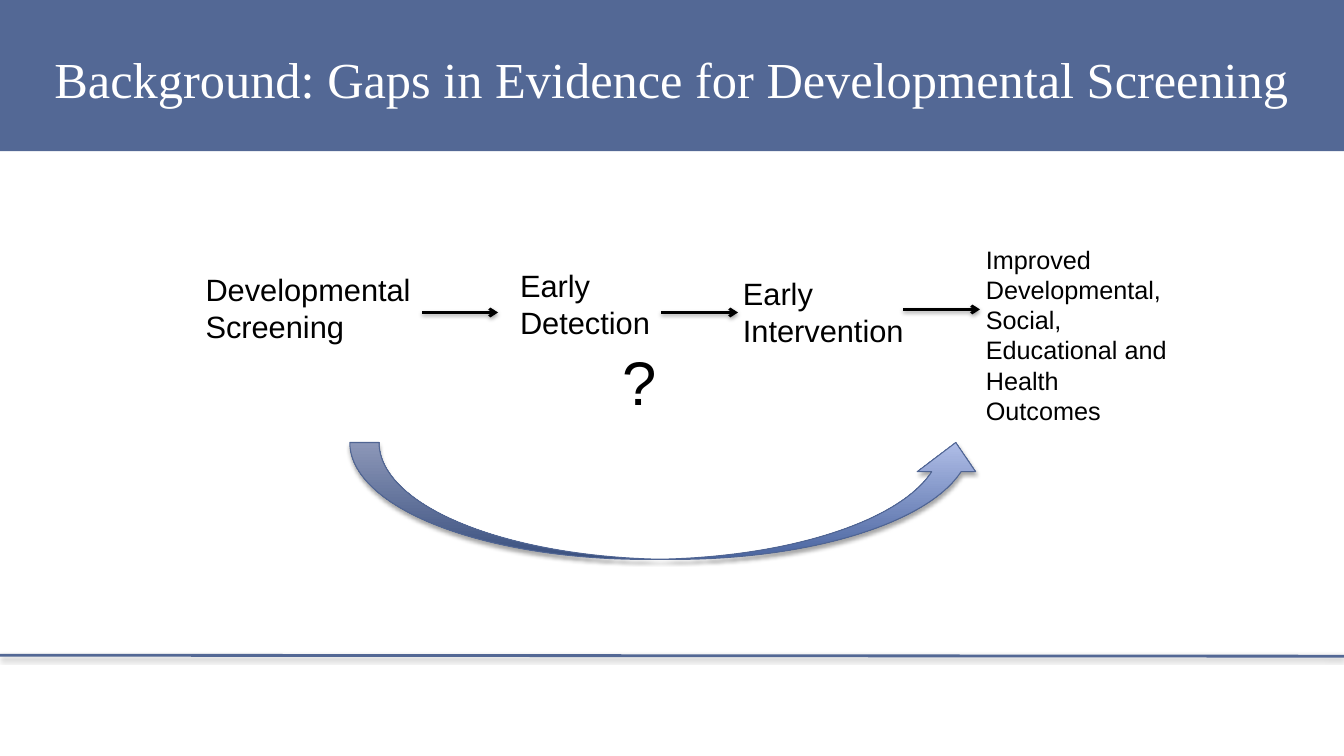
"""Build the slide on gaps in evidence for developmental screening."""
from lxml import etree
from pptx import Presentation
from pptx.dml.color import RGBColor
from pptx.enum.shapes import MSO_CONNECTOR, MSO_SHAPE
from pptx.enum.text import MSO_ANCHOR
from pptx.oxml import parse_xml
from pptx.oxml.ns import nsdecls, qn
from pptx.util import Inches, Pt

STRAIGHT = MSO_CONNECTOR.STRAIGHT
RECTANGLE = MSO_SHAPE.RECTANGLE
CURVED_ARROW = MSO_SHAPE.CURVED_UP_ARROW
TOP, BOTTOM = MSO_ANCHOR.TOP, MSO_ANCHOR.BOTTOM

BLUE = RGBColor(0x53, 0x68, 0x95)
BLACK = RGBColor(0, 0, 0)
WHITE = RGBColor(0xFF, 0xFF, 0xFF)
CURVE_LINE = RGBColor(0x50, 0x65, 0x93)
CURVE_DARK = RGBColor(0x49, 0x64, 0x9F)
CURVE_LIGHT = RGBColor(0xAF, 0xBD, 0xE7)


def add_shadow(shape, alpha, distance):
    shape._element.spPr.append(parse_xml(
        f'<a:effectLst {nsdecls("a")}><a:outerShdw blurRad="40000" '
        f'dist="{distance}" dir="5400000" rotWithShape="0">'
        f'<a:srgbClr val="000000"><a:alpha val="{alpha}000"/></a:srgbClr>'
        '</a:outerShdw></a:effectLst>'))


def add_text(text, left, top, width, height, size, color=BLACK,
             name="Arial", anchor=TOP):
    box = s.shapes.add_textbox(Inches(left), Inches(top),
                               Inches(width), Inches(height))
    tf = box.text_frame
    tf.word_wrap = True
    tf.vertical_anchor = anchor
    tf.text = text
    for p in tf.paragraphs:
        for r in p.runs:
            r.font.name = name
            r.font.size = Pt(size)
            r.font.color.rgb = color
    return tf


prs = Presentation()
prs.slide_width, prs.slide_height = Inches(13.33), Inches(7.5)
s = prs.slides.add_slide(prs.slide_layouts[6])

banner = s.shapes.add_shape(RECTANGLE, 0, 0, prs.slide_width, Inches(1.5))
banner.shadow.inherit = False
banner.fill.solid()
banner.fill.fore_color.rgb = BLUE
banner.line.fill.background()

title = add_text("Background: Gaps in Evidence for Developmental Screening",
                 0.54, 0.31, 12.34, 0.77, 36, WHITE, "Times New Roman", BOTTOM)
for side in ("left", "top", "right", "bottom"):
    setattr(title, f"margin_{side}", 0)

lines = [
    (0, 6.5, 13.33, 6.51, BLUE, False),
    (4.19, 3.1, 4.94, 3.1, BLACK, True),
    (6.56, 3.1, 7.32, 3.1, BLACK, True),
    (8.96, 3.07, 9.72, 3.07, BLACK, True),
]
for x1, y1, x2, y2, color, has_head in lines:
    line = s.shapes.add_connector(STRAIGHT, Inches(x1), Inches(y1),
                                  Inches(x2), Inches(y2))
    line.line.color.rgb = color
    line.line.width = Pt(2)
    if has_head:
        etree.SubElement(line.line._get_or_add_ln(), qn("a:tailEnd"),
                         type="arrow")
    add_shadow(line, 38, 20000)

labels = [
    ("Developmental\nScreening", 1.94, 2.64, 2.25, 0.84, 22),
    ("Early Detection", 5.06, 2.6, 1.93, 0.84, 22),
    ("Early Intervention", 7.27, 2.68, 1.92, 0.84, 22),
    ("Improved\nDevelopmental, Social, Educational and Health Outcomes",
     9.68, 2.37, 2, 1.92, 18),
    ("?", 6.08, 3.36, 1.04, 0.84, 44),
]
for label in labels:
    add_text(*label)

curve = s.shapes.add_shape(CURVED_ARROW, Inches(3.47), Inches(4.39),
                           Inches(6.3), Inches(1.16))
curve.fill.gradient()
curve.fill.gradient_angle = 90
for stop, position, color in zip(curve.fill.gradient_stops, (0, 1),
                                 (CURVE_DARK, CURVE_LIGHT)):
    stop.position = position
    stop.color.rgb = color
curve.line.color.rgb = CURVE_LINE
curve.line.width = Pt(0.75)
add_shadow(curve, 35, 23000)

prs.save("out.pptx")
